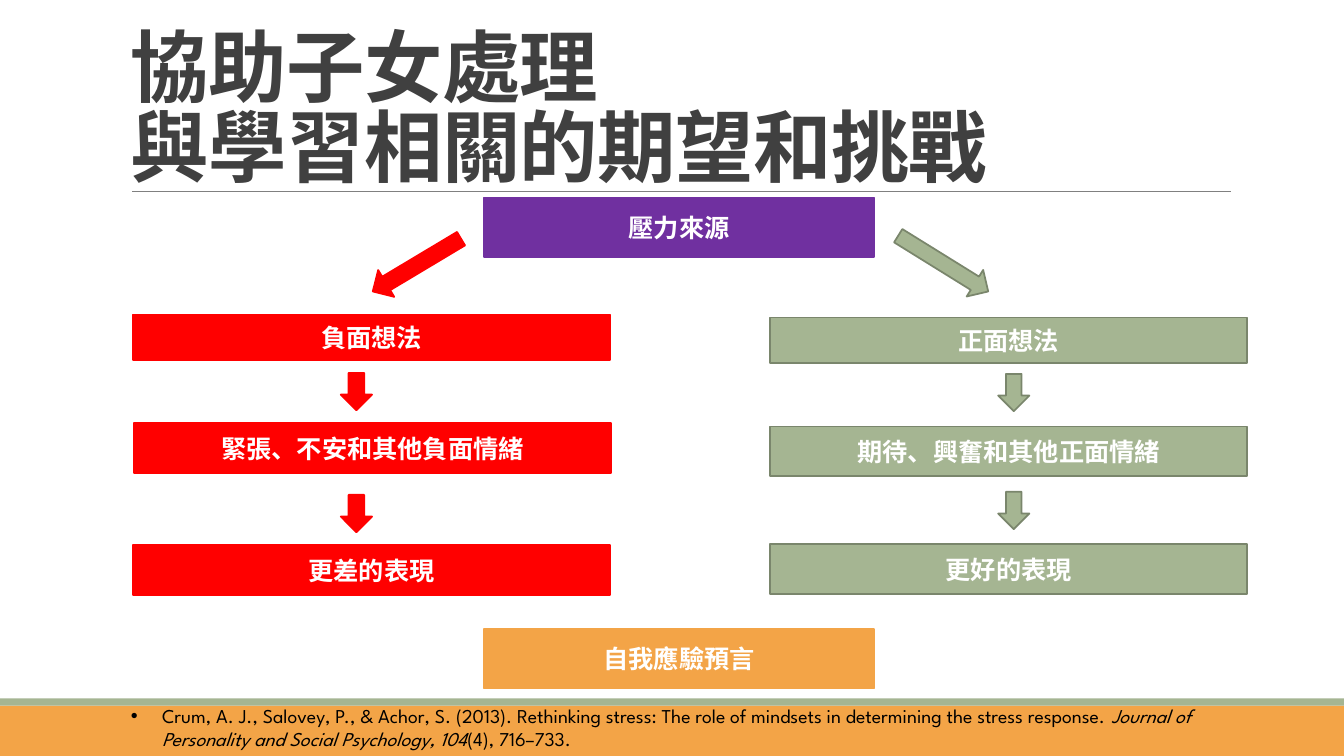
from lxml import etree
from pptx import Presentation
from pptx.dml.color import RGBColor
from pptx.enum import shapes, text
from pptx.oxml.ns import qn
from pptx.util import Inches, Pt

COLORS = {
    "purple": "7030A0", "red": "FF0000", "green": "A5B592", "moss": "7A866C",
    "orange": "F3A447", "white": "FFFFFF", "ink": "404040", "black": "000000",
    "rule": "808080",
}
CJK, LATIN = "Noto Sans CJK SC", "League Spartan"

TITLE = "協助子女處理\v與學習相關的期望和挑戰"
ENDPOINTS = [("壓力來源", 1.96, "purple"), ("自我應驗預言", 6.24, "orange")]
PATHS = [
    {
        "fill": "red", "line": "red", "arrow_left": 3.38,
        "branch": (3.98, 2.12, 0.31, 1.02, 59.1),
        "steps": [("負面想法", 1.32, 3.12, 0.45),
                  ("緊張、不安和其他負面情緒", 1.33, 4.2, 0.49),
                  ("更差的表現", 1.32, 5.41, 0.49)],
        "arrow_tops": [3.7, 4.91],
    },
    {
        "fill": "green", "line": "moss", "arrow_left": 9.9,
        "branch": (9.2, 2.09, 0.31, 1.05, 301.8),
        "steps": [("正面想法", 7.64, 3.15, 0.45),
                  ("期待、興奮和其他正面情緒", 7.64, 4.23, 0.49),
                  ("更好的表現", 7.64, 5.4, 0.49)],
        "arrow_tops": [3.71, 4.88],
    },
]
CITATION = [
    ("Crum, A. J., Salovey, P., & Achor, S. (2013). Rethinking stress: "
     "The role of mindsets in determining the stress response. ", False),
    ("Journal of Personality and Social Psychology, 104", True),
    ("(4), 716–733.", False),
]

prs = Presentation()
prs.slide_width, prs.slide_height = Inches(13.33), Inches(7.5)
slide = prs.slides.add_slide(prs.slide_layouts[6])


def rgb(name):
    return RGBColor.from_string(COLORS[name])


def set_font(paragraph, face, size, color, bold=False):
    font = paragraph.font
    font.name, font.size, font.bold = face, Pt(size), bold
    font.color.rgb = rgb(color)
    defaults = paragraph._p.pPr.find(qn("a:defRPr"))
    etree.SubElement(defaults, qn("a:ea")).set("typeface", face)
    return defaults


def add_block(kind, left, top, width, height, fill, line=None, label=None):
    block = slide.shapes.add_shape(
        kind, Inches(left), Inches(top), Inches(width), Inches(height))
    block.shadow.inherit = False
    block.fill.solid()
    block.fill.fore_color.rgb = rgb(fill)
    if line:
        block.line.color.rgb = rgb(line)
        block.line.width = Pt(1.25)
    else:
        block.line.fill.background()
    if label:
        frame = block.text_frame
        frame.word_wrap = True
        frame.vertical_anchor = text.MSO_ANCHOR.MIDDLE
        paragraph = frame.paragraphs[0]
        paragraph.text = label
        paragraph.alignment = text.PP_ALIGN.CENTER
        set_font(paragraph, CJK, 18, "white", True)
    return block


def add_frame(left, top, width, height, anchor):
    frame = slide.shapes.add_textbox(
        Inches(left), Inches(top), Inches(width), Inches(height)).text_frame
    frame.word_wrap = True
    frame.vertical_anchor = anchor
    return frame


RECT = shapes.MSO_SHAPE.RECTANGLE
DOWN = shapes.MSO_SHAPE.DOWN_ARROW

add_block(RECT, 0, 7, 13.33, 0.5, "orange")
add_block(RECT, 0, 6.93, 13.33, 0.07, "green")

title_rule = slide.shapes.add_connector(
    shapes.MSO_CONNECTOR.STRAIGHT, Inches(1.31), Inches(1.9), Inches(12.21), Inches(1.9))
title_rule.line.color.rgb = rgb("rule")
title_rule.line.width = Pt(0.5)
etree.SubElement(title_rule._element.spPr, qn("a:effectLst"))

for label, top, color in ENDPOINTS:
    add_block(RECT, 4.8, top, 3.87, 0.59, color, color, label)

for route in PATHS:
    fill, line = route["fill"], route["line"]
    for label, left, top, height in route["steps"]:
        add_block(RECT, left, top, 4.73, height, fill, line, label)
    for top in route["arrow_tops"]:
        add_block(DOWN, route["arrow_left"], top, 0.31, 0.37, fill, line)
    *place, angle = route["branch"]
    add_block(DOWN, *place, fill, line).rotation = angle

title = add_frame(1.2, 0.64, 11, 1.32, text.MSO_ANCHOR.BOTTOM).paragraphs[0]
title.text = TITLE
title.line_spacing = 0.85
set_font(title, CJK, 56, "ink", True).set("spc", "-50")

citation = add_frame(1.2, 6.93, 11.44, 0.57, text.MSO_ANCHOR.TOP).paragraphs[0]
indent = citation._p.get_or_add_pPr()
indent.set("marL", str(Inches(0.31)))
indent.set("indent", str(-Inches(0.31)))
etree.SubElement(indent, qn("a:buFont")).set("typeface", "Arial")
etree.SubElement(indent, qn("a:buChar")).set("char", "•")
set_font(citation, LATIN, 14, "black")
for words, italic in CITATION:
    run = citation.add_run()
    run.text = words
    run.font.italic = italic

prs.save("out.pptx")
